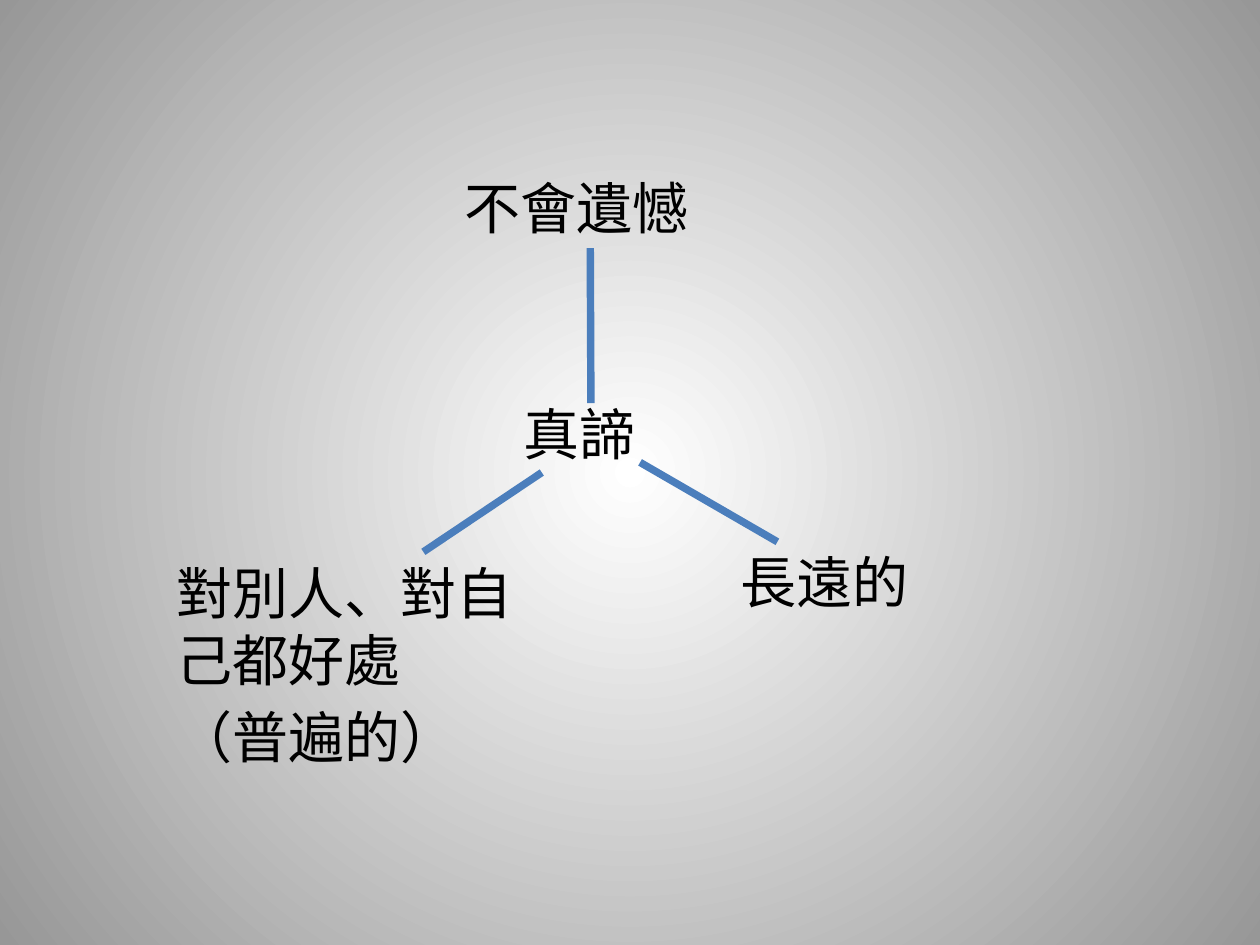
from pptx import Presentation
from pptx.dml.color import RGBColor
from pptx.enum.shapes import MSO_CONNECTOR
from pptx.enum.text import MSO_AUTO_SIZE
from pptx.oxml.ns import qn
from pptx.util import Inches, Pt
from lxml.etree import SubElement


def color(code):
    return RGBColor.from_string(code)


def backdrop(slide, inner, outer):
    """Fill the background with a gradient that spreads from the centre."""
    fill = slide.background.fill
    fill.gradient()
    for stop, code, place in zip(fill.gradient_stops, (inner, outer), (0, 1)):
        stop.color.rgb = color(code)
        stop.position = place
    grad = slide._element.find(".//" + qn("a:gradFill"))
    grad.remove(grad.find(qn("a:lin")))
    round_fill = SubElement(grad, qn("a:path"), {"path": "circle"})
    SubElement(round_fill, qn("a:fillToRect"),
               {side: "50000" for side in "ltrb"})


def label(slide, words, x, y, w, h=0.64, size=32, font="Arial",
          ink="000000", before=0):
    """Add a text box with one paragraph for each line of words."""
    box = slide.shapes.add_textbox(Inches(x), Inches(y), Inches(w), Inches(h))
    frame = box.text_frame
    frame.word_wrap = True
    frame.auto_size = MSO_AUTO_SIZE.SHAPE_TO_FIT_TEXT
    frame.text = words
    for para in frame.paragraphs:
        para.space_before = Pt(before)
        style = para.runs[0].font
        style.size, style.name = Pt(size), font
        style.color.rgb = color(ink)
    return box


def link(slide, start, end, ink="4B7EBC", width=4.25):
    """Draw a straight branch between two points."""
    line = slide.shapes.add_connector(
        MSO_CONNECTOR.STRAIGHT, *map(Inches, start + end))
    line.line.color.rgb = color(ink)
    line.line.width = Pt(width)
    SubElement(line._element.spPr, qn("a:effectLst"))
    return line


def main():
    deck = Presentation()
    deck.slide_width, deck.slide_height = Inches(10), Inches(7.5)
    slide = deck.slides.add_slide(deck.slide_layouts[6])
    backdrop(slide, "FFFFFF", "979797")

    # Central idea and its three qualities
    label(slide, "真諦", 4.06, 3.12, 1.17)
    top = label(slide, "不會遺憾", 3.59, 1.33, 2.19)
    label(slide, "長遠的", 5.78, 4.3, 1.64)
    label(slide, "對別人、對自己都好處\n（普遍的）", 1.3, 4.38, 2.89, 1.8, before=6)

    # Branches
    link(slide, (4.3, 3.75), (3.36, 4.38))
    link(slide, (5.08, 3.67), (6.17, 4.3))
    stem = link(slide, (4.69, 1.97), (4.69, 3.2))
    stem.begin_connect(top, 2)

    deck.save("out.pptx")


if __name__ == "__main__":
    main()
